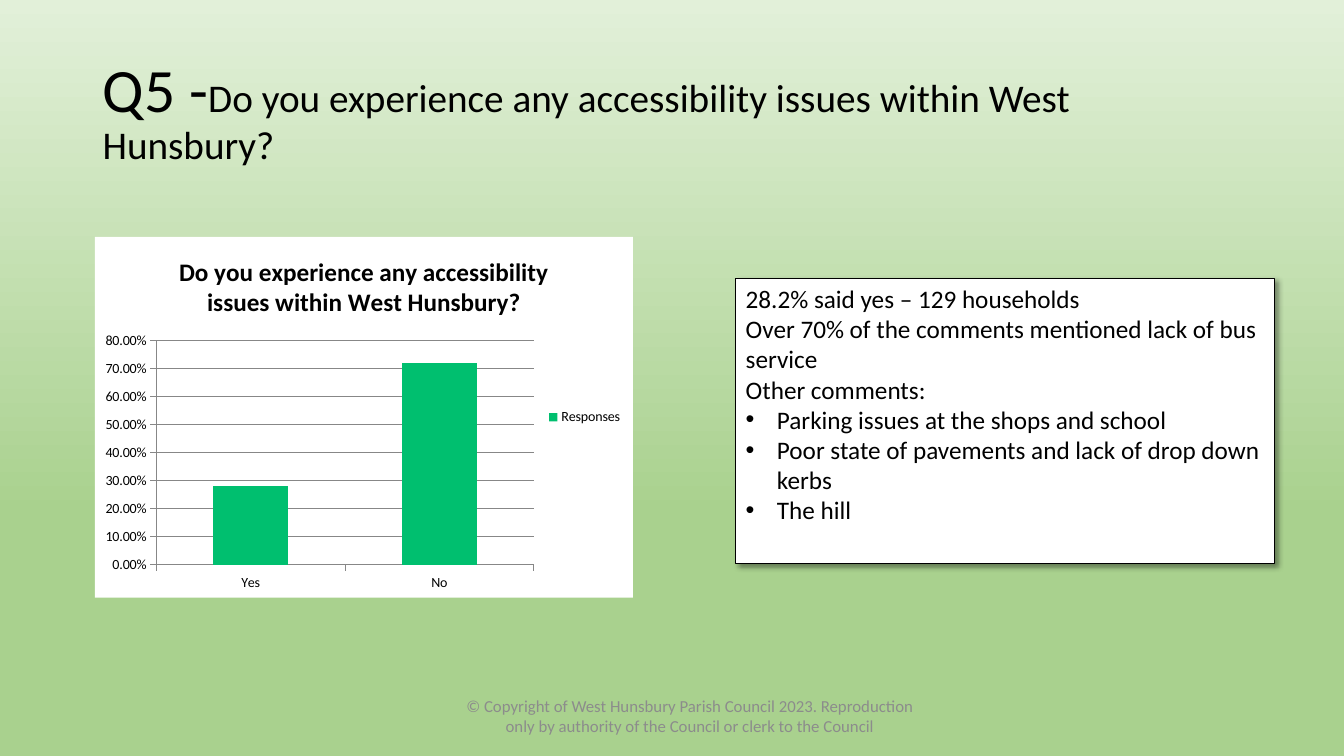
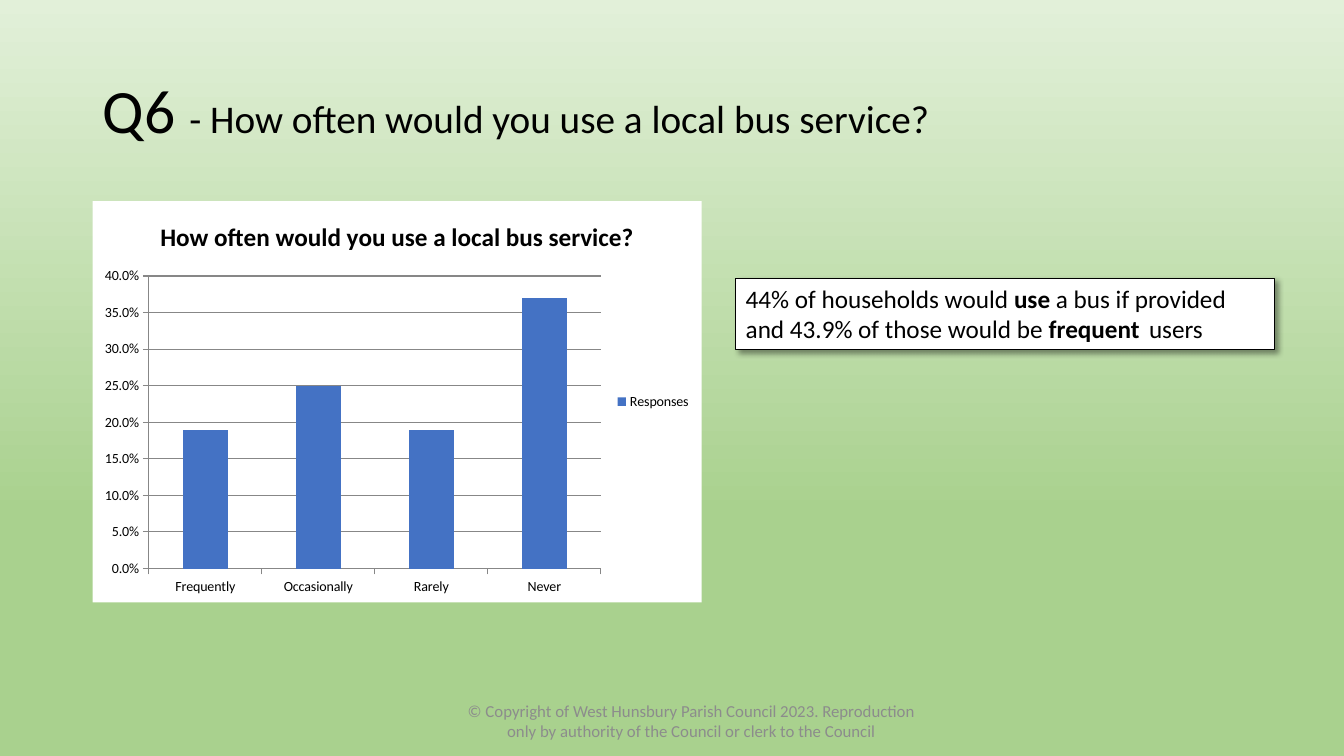
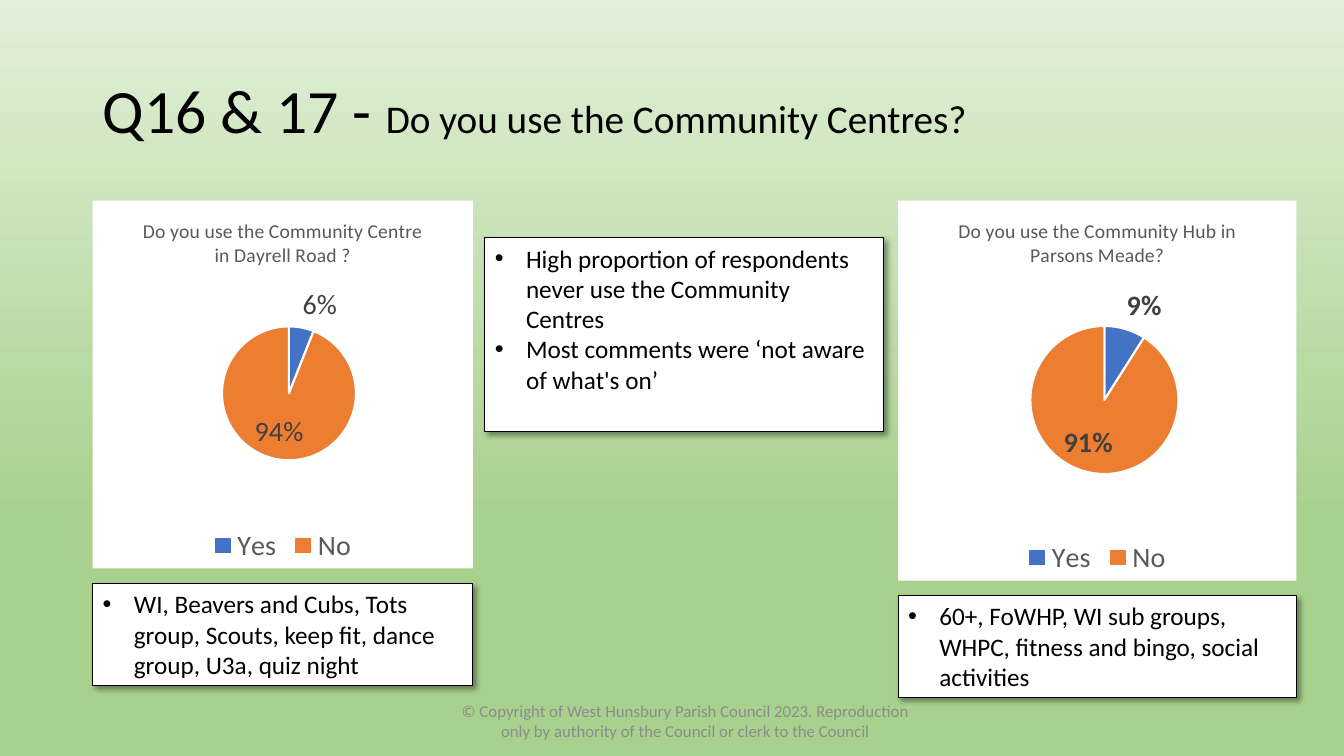
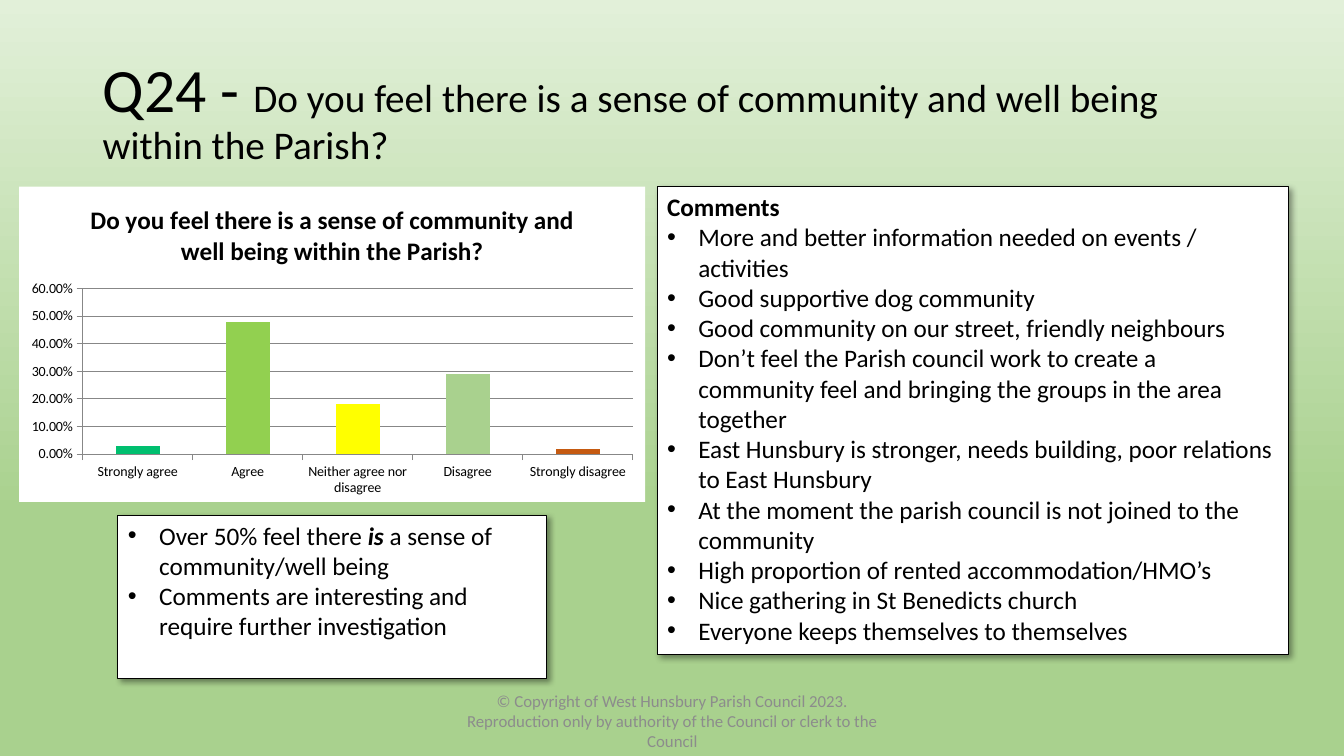
"""Build four survey result slides for a parish council."""
from dataclasses import dataclass
from typing import Any, Optional

import pptx
import pptx.chart.data
import pptx.dml.color
import pptx.enum.chart
import pptx.enum.shapes
import pptx.enum.text
import pptx.oxml
import pptx.oxml.ns
import pptx.util

FONT = "Calibri"
BLACK, WHITE = "000000", "FFFFFF"
PALE_GREEN, LEAF_GREEN = "E2F0D9", "A9D18E"
EMERALD, BLUE, ORANGE = "00BF6F", "4472C4", "ED7D31"
FOOTER_GREY, AXIS_GREY, LEGEND_GREY, LABEL_GREY = "8C8C8C", "878787", "595959", "404040"
WIDTH, HEIGHT = pptx.util.Inches(13.33), pptx.util.Inches(7.5)
BULLET_INDENT = pptx.util.Inches(0.31)
COPYRIGHT = (
    "© Copyright of West Hunsbury Parish Council 2023. Reproduction "
    "only by authority of the Council or clerk to the Council"
)


@dataclass(frozen=True)
class Area:
    """A rectangle in percent of the slide's width and height."""

    left: float
    top: float
    width: float
    height: float

    def lengths(self) -> tuple[int, int, int, int]:
        return (
            int(WIDTH * self.left / 100),
            int(HEIGHT * self.top / 100),
            int(WIDTH * self.width / 100),
            int(HEIGHT * self.height / 100),
        )


@dataclass(frozen=True)
class Span:
    text: str
    size: float = 18
    bold: bool = False
    italic: bool = False
    color: str = BLACK


@dataclass(frozen=True)
class Line:
    spans: tuple[Span, ...]
    bullet: bool = False


@dataclass(frozen=True)
class Note:
    area: Area
    lines: tuple[Line, ...]


@dataclass(frozen=True)
class Bars:
    area: Area
    title: str
    values: dict[str, float]
    colors: tuple[str, ...]
    maximum: float
    step: float
    number_format: str = "0.00%"
    legend: bool = True


@dataclass(frozen=True)
class Pie:
    area: Area
    title: str
    values: dict[str, float]
    plot: Area
    bold_labels: bool = False


@dataclass(frozen=True)
class Page:
    lead: str
    question: str
    charts: tuple[Any, ...]
    notes: tuple[Note, ...]
    footer: Area


TITLE_AREA = Area(6.9, 5.33, 86.25, 19.33)


def plain(text: str) -> Line:
    return Line((Span(text),))


def bullets(*texts: str) -> tuple[Line, ...]:
    return tuple(Line((Span(text),), True) for text in texts)


PAGES = (
    Page(
        "Q5 -",
        "Do you experience any accessibility issues within West Hunsbury?",
        (Bars(
            Area(7.05, 31.33, 40.05, 47.73),
            "Do you experience any accessibility issues within West Hunsbury?",
            {"Yes": 0.28, "No": 0.72}, (EMERALD,) * 2, 0.8, 0.1,
        ),),
        (Note(Area(54.75, 36.8, 40.05, 37.73), (
            plain("28.2% said yes – 129 households"),
            plain("Over 70% of the comments mentioned lack of bus service"),
            plain("Other comments:"),
            *bullets(
                "Parking issues at the shops and school",
                "Poor state of pavements and lack of drop down kerbs",
                "The hill",
            ),
        )),),
        Area(33.3, 92, 36.08, 5.33),
    ),
    Page(
        "Q6 ",
        "- How often would you use a local bus service?",
        (Bars(
            Area(6.9, 26.6, 45.3, 53.07),
            "How often would you use a local bus service?",
            {"Frequently": 0.19, "Occasionally": 0.25, "Rarely": 0.19, "Never": 0.37},
            (BLUE,) * 4, 0.4, 0.05, "0.0%",
        ),),
        (Note(Area(54.75, 36.8, 40.05, 9.47), (
            Line((
                Span("44% of households would "),
                Span("use", bold=True),
                Span(" a bus if provided and 43.9% of those would be "),
                Span("frequent\t", bold=True),
                Span("users"),
            )),
        )),),
        Area(33.15, 92.67, 36.6, 5.33),
    ),
    Page(
        "Q16 & 17 - ",
        "Do you use the Community Centres?",
        (
            Pie(
                Area(6.9, 26.53, 28.28, 48.67),
                "Do you use the Community Centre in Dayrell Road ?",
                {"Yes": 0.06, "No": 0.94}, Area(34, 34.2, 35.3, 36.4),
            ),
            Pie(
                Area(66.83, 26.53, 29.63, 50.27),
                "Do you use the Community Hub in Parsons Meade?",
                {"Yes": 0.09, "No": 0.91}, Area(33.2, 33, 37.2, 39), True,
            ),
        ),
        (
            Note(Area(36.08, 31.47, 29.63, 25.6), bullets(
                "High proportion of respondents never use the Community Centres",
                "Most comments were ‘not aware of what's on’",
            )),
            Note(Area(6.9, 77.2, 28.28, 13.47), bullets(
                "WI, Beavers and Cubs, Tots group, Scouts, keep fit, dance group, U3a, quiz night",
            )),
            Note(Area(66.83, 78.8, 29.63, 13.47), bullets(
                "60+, FoWHP, WI sub groups, WHPC, fitness and bingo, social activities",
            )),
        ),
        Area(33.15, 92.67, 35.7, 5.33),
    ),
    Page(
        "Q24 - ",
        "Do you feel there is a sense of community and well being within the Parish?",
        (Bars(
            Area(1.43, 24.67, 46.58, 41.73),
            "Do you feel there is a sense of community and well being within the Parish?",
            {
                "Strongly agree": 0.03, "Agree": 0.48, "Neither agree nor disagree": 0.18,
                "Disagree": 0.29, "Strongly disagree": 0.02,
            },
            (EMERALD, "92D050", "FFFF00", LEAF_GREEN, "C55A11"), 0.6, 0.1, legend=False,
        ),),
        (
            Note(Area(48.9, 24.67, 46.95, 61.87), (
                Line((Span("Comments", bold=True),)),
                *bullets(
                    "More and better information needed on events / activities",
                    "Good supportive dog community",
                    "Good community on our street, friendly neighbours",
                    "Don’t feel the Parish council work to create a community feel "
                    "and bringing the groups in the area together",
                    "East Hunsbury is stronger, needs building, poor relations to East Hunsbury",
                    "At the moment the parish council is not joined to the community",
                    "High proportion of rented accommodation/HMO’s",
                    "Nice gathering in St Benedicts church",
                    "Everyone keeps themselves to themselves",
                ),
            )),
            Note(Area(8.78, 68.13, 31.88, 21.6), (
                Line((
                    Span("Over 50% feel there "),
                    Span("is ", bold=True, italic=True),
                    Span("a sense of community/well being"),
                ), True),
                *bullets("Comments are interesting and require further investigation"),
            )),
        ),
        Area(33.15, 92.67, 33.75, 5.33),
    ),
)


def rgb(value: str) -> pptx.dml.color.RGBColor:
    return pptx.dml.color.RGBColor.from_string(value)


def assign(target: Any, formats: dict[str, Any]) -> None:
    for name, value in formats.items():
        setattr(target, name, value)


def set_font(font: Any, size: float, color: str = BLACK, bold: bool = False, italic: bool = False) -> None:
    assign(font, {"name": FONT, "size": pptx.util.Pt(size), "bold": bold, "italic": italic})
    font.color.rgb = rgb(color)


def set_fill(fill: Any, color: str) -> None:
    fill.solid()
    fill.fore_color.rgb = rgb(color)


def set_line(line: Any, color: str, width: float) -> None:
    line.color.rgb = rgb(color)
    line.width = pptx.util.Pt(width)


def xml(text: str) -> Any:
    """Parse one element whose closing bracket takes the namespaces."""
    head, rest = text.split(">", 1)
    names = pptx.oxml.ns.nsdecls("a", "c")
    close = "/" if head.endswith("/") else ""
    return pptx.oxml.parse_xml(f"{head.rstrip('/')} {names}{close}>{rest}")


def add_bullet(para: Any) -> None:
    properties = para._p.get_or_add_pPr()
    properties.set("marL", str(BULLET_INDENT))
    properties.set("indent", str(-BULLET_INDENT))
    properties.append(xml('<a:buFont typeface="Arial"/>'))
    properties.append(xml('<a:buChar char="•"/>'))


def write(frame: Any, lines: tuple[Line, ...], anchor: Any, align: Any, spacing: float = 1.0) -> None:
    assign(frame, {
        "word_wrap": True,
        "auto_size": pptx.enum.text.MSO_AUTO_SIZE.NONE,
        "vertical_anchor": anchor,
    })
    for index, line in enumerate(lines):
        para = frame.paragraphs[0] if index == 0 else frame.add_paragraph()
        assign(para, {"alignment": align, "line_spacing": spacing})
        if line.bullet:
            add_bullet(para)
        for span in line.spans:
            run = para.add_run()
            run.text = span.text
            set_font(run.font, span.size, span.color, span.bold, span.italic)


def add_label(page: Any, area: Area, spans: tuple[Span, ...], align: Any, spacing: float = 1.0) -> None:
    box = page.shapes.add_textbox(*area.lengths())
    write(box.text_frame, (Line(spans),), pptx.enum.text.MSO_ANCHOR.MIDDLE, align, spacing)


def add_note(page: Any, note: Note) -> None:
    box = page.shapes.add_shape(pptx.enum.shapes.MSO_SHAPE.RECTANGLE, *note.area.lengths())
    set_fill(box.fill, WHITE)
    set_line(box.line, BLACK, 0.75)
    box.shadow.inherit = False
    effects = box.element.spPr.find(pptx.oxml.ns.qn("a:effectLst"))
    effects.append(xml(
        '<a:outerShdw blurRad="50800" dist="38100" dir="2700000" algn="tl" rotWithShape="0">'
        f'<a:srgbClr val="{BLACK}"><a:alpha val="40000"/></a:srgbClr></a:outerShdw>'
    ))
    write(box.text_frame, note.lines, pptx.enum.text.MSO_ANCHOR.TOP, pptx.enum.text.PP_ALIGN.LEFT)


def add_chart(page: Any, data: Any, kind: Any, series: str, title: Span) -> Any:
    """Add a white chart panel with one series and a title."""
    content = pptx.chart.data.CategoryChartData(number_format="0%")
    content.categories = list(data.values)
    content.add_series(series, list(data.values.values()))
    chart = page.shapes.add_chart(kind, *data.area.lengths(), content).chart
    set_font(chart.font, 10)
    chart.element.find(pptx.oxml.ns.qn("c:chart")).addnext(xml(
        f'<c:spPr><a:solidFill><a:srgbClr val="{WHITE}"/></a:solidFill>'
        "<a:ln><a:noFill/></a:ln></c:spPr>"
    ))
    chart.has_title = True
    frame = chart.chart_title.text_frame
    frame.text = title.text
    set_font(frame.paragraphs[0].runs[0].font, title.size, title.color, title.bold)
    return chart


def add_legend(chart: Any, position: Any, size: float, color: str) -> None:
    chart.has_legend = True
    assign(chart.legend, {"position": position, "include_in_layout": False})
    set_font(chart.legend.font, size, color)


def add_bars(page: Any, bars: Bars) -> None:
    kinds = pptx.enum.chart
    series_name = "Responses" if bars.legend else "Series 1"
    chart = add_chart(page, bars, kinds.XL_CHART_TYPE.COLUMN_CLUSTERED, series_name,
                      Span(bars.title, bold=True))
    chart.has_legend = False
    if bars.legend:
        add_legend(chart, kinds.XL_LEGEND_POSITION.RIGHT, 10, BLACK)
    assign(chart.plots[0], {"gap_width": 150, "vary_by_categories": False})
    for axis in (chart.category_axis, chart.value_axis):
        assign(axis, {
            "major_tick_mark": kinds.XL_TICK_MARK.OUTSIDE,
            "minor_tick_mark": kinds.XL_TICK_MARK.NONE,
        })
        set_line(axis.format.line, AXIS_GREY, 0.75)
        set_font(axis.tick_labels.font, 10)
    assign(chart.value_axis, {
        "minimum_scale": 0, "maximum_scale": bars.maximum,
        "major_unit": bars.step, "has_major_gridlines": True,
    })
    set_line(chart.value_axis.major_gridlines.format.line, AXIS_GREY, 0.75)
    assign(chart.value_axis.tick_labels, {
        "number_format": bars.number_format, "number_format_is_linked": False,
    })
    series = chart.plots[0].series[0]
    set_fill(series.format.fill, bars.colors[0])
    for index, color in enumerate(bars.colors):
        if color != bars.colors[0]:
            set_fill(series.points[index].format.fill, color)


def add_pie(page: Any, pie: Pie) -> None:
    kinds = pptx.enum.chart
    chart = add_chart(page, pie, kinds.XL_CHART_TYPE.PIE, "Series 1",
                      Span(pie.title, 14, color=LEGEND_GREY))
    add_legend(chart, kinds.XL_LEGEND_POSITION.BOTTOM, 20, LEGEND_GREY)
    plot = chart.plots[0]
    assign(plot, {"vary_by_categories": True, "has_data_labels": True})
    assign(plot.data_labels, {
        "show_value": True, "show_percentage": False,
        "number_format": "0%", "number_format_is_linked": False,
        "position": kinds.XL_LABEL_POSITION.BEST_FIT,
    })
    set_font(plot.data_labels.font, 20, LABEL_GREY, pie.bold_labels)
    for index, color in enumerate((BLUE, ORANGE)):
        slice_format = plot.series[0].points[index].format
        set_fill(slice_format.fill, color)
        set_line(slice_format.line, WHITE, 1.5)
    place_plot(chart, pie.plot)


def place_plot(chart: Any, area: Area) -> None:
    """Fix the plot's place in percent of the chart's size."""
    plot_area = chart.element.find(".//" + pptx.oxml.ns.qn("c:plotArea"))
    for layout in plot_area.findall(pptx.oxml.ns.qn("c:layout")):
        plot_area.remove(layout)
    shares = {"x": area.left, "y": area.top, "w": area.width, "h": area.height}
    parts = '<c:layoutTarget val="inner"/><c:xMode val="edge"/><c:yMode val="edge"/>'
    parts += "".join(f'<c:{name} val="{share / 100:.3f}"/>' for name, share in shares.items())
    plot_area.insert(0, xml(f"<c:layout><c:manualLayout>{parts}</c:manualLayout></c:layout>"))


def set_background(master: Any) -> None:
    fill = master.background.fill
    fill.gradient()
    fill.gradient_angle = 270
    for stop, color, position in zip(fill.gradient_stops, (PALE_GREEN, LEAF_GREEN), (0, 0.68)):
        stop.color.rgb = rgb(color)
        stop.position = position


def add_page(deck: Any, content: Page) -> None:
    page = deck.slides.add_slide(deck.slide_layouts[6])
    align = pptx.enum.text.PP_ALIGN
    add_label(page, TITLE_AREA, (Span(content.lead, 44), Span(content.question, 28)), align.LEFT, 0.9)
    for chart in content.charts:
        if isinstance(chart, Pie):
            add_pie(page, chart)
        else:
            add_bars(page, chart)
    for note in content.notes:
        add_note(page, note)
    add_label(page, content.footer, (Span(COPYRIGHT, 12, color=FOOTER_GREY),), align.CENTER)


def main() -> None:
    deck = pptx.Presentation()
    assign(deck, {"slide_width": WIDTH, "slide_height": HEIGHT})
    set_background(deck.slide_master)
    for content in PAGES:
        add_page(deck, content)
    deck.save("out.pptx")


if __name__ == "__main__":
    main()
